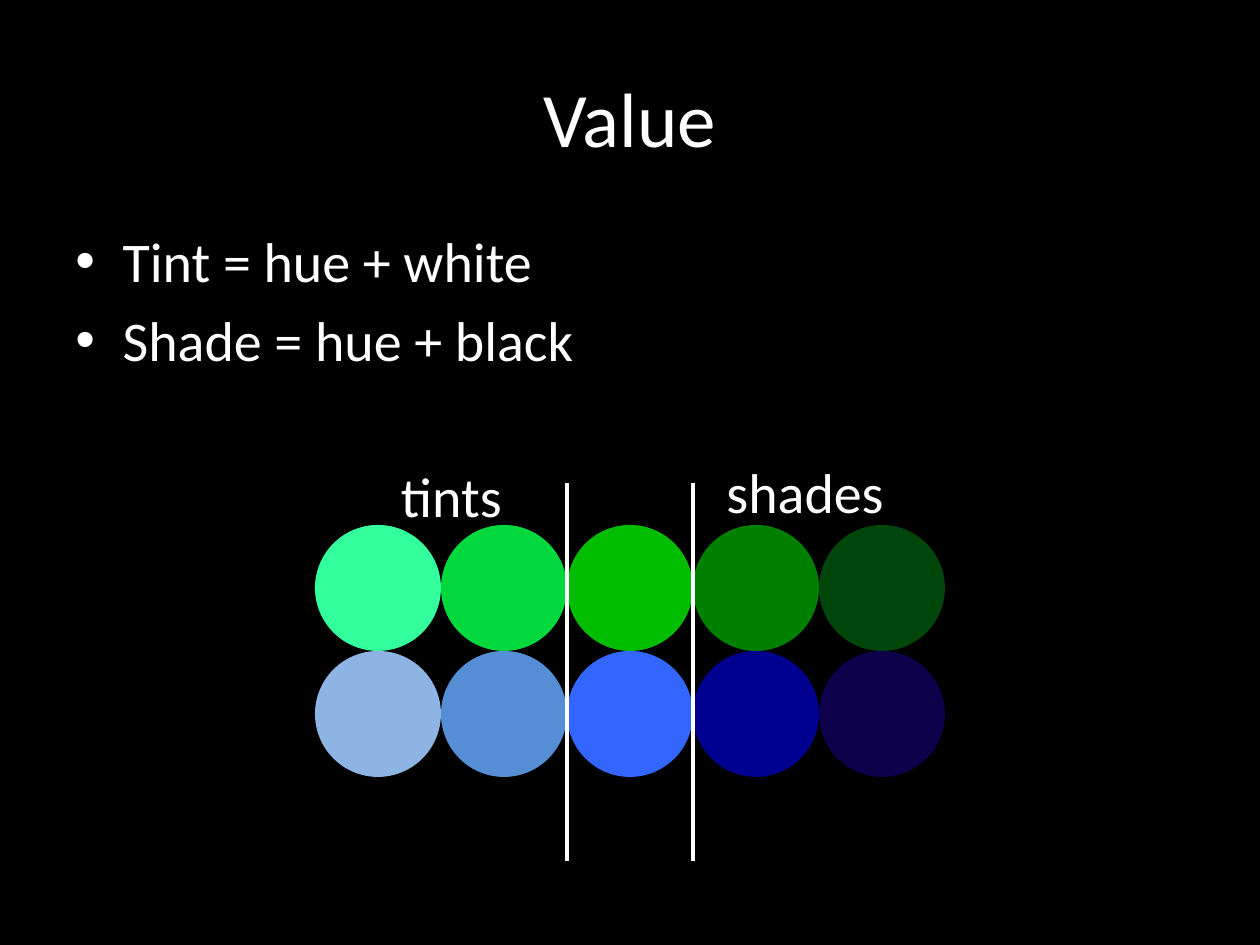
from lxml import etree
from pptx import Presentation
from pptx.dml.color import RGBColor
from pptx.enum import shapes, text
from pptx.oxml.ns import qn
from pptx.util import Pt

BLACK = RGBColor(0x00, 0x00, 0x00)
WHITE = RGBColor(0xFF, 0xFF, 0xFF)

# Each row runs from the lightest tint to the darkest shade
GREENS = [RGBColor.from_string(c) for c in
          ("33FF9C", "00D83E", "00BD00", "008000", "004509")]
BLUES = [RGBColor.from_string(c) for c in
         ("8EB4E3", "558ED5", "3366FF", "000090", "0D014C")]

FONT = "Calibri"
SIZE = 72             # circle diameter and grid step
LEFT, TOP = 180, 300  # corner of the circle grid


def add_bullet(par):
    props = par._p.get_or_add_pPr()
    props.set("marL", str(Pt(27)))
    props.set("indent", str(-Pt(27)))
    font = etree.SubElement(props, qn("a:buFont"))
    font.set("typeface", "Arial")
    mark = etree.SubElement(props, qn("a:buChar"))
    mark.set("char", "•")


def add_text(slide, lines, x, y, w, h, size=32, align=text.PP_ALIGN.LEFT,
             anchor=text.MSO_ANCHOR.TOP, bullet=False, before=0):
    box = slide.shapes.add_textbox(Pt(x), Pt(y), Pt(w), Pt(h))
    frame = box.text_frame
    frame.word_wrap = True
    frame.vertical_anchor = anchor
    frame.text = "\n".join(lines)
    for par in frame.paragraphs:
        par.alignment = align
        par.space_before = Pt(before)
        par.font.name = FONT
        par.font.size = Pt(size)
        par.font.color.rgb = WHITE
        if bullet:
            add_bullet(par)


def add_dot(slide, x, y, color):
    dot = slide.shapes.add_shape(shapes.MSO_SHAPE.OVAL,
                                 Pt(x), Pt(y), Pt(SIZE), Pt(SIZE))
    dot.shadow.inherit = False
    dot.fill.solid()
    dot.fill.fore_color.rgb = color
    dot.line.fill.background()


def add_rule(slide, x, top, end):
    rule = slide.shapes.add_connector(shapes.MSO_CONNECTOR.STRAIGHT,
                                      Pt(x), Pt(top), Pt(x), Pt(end))
    rule.line.color.rgb = WHITE
    rule.line.width = Pt(2)
    etree.SubElement(rule._element.spPr, qn("a:effectLst"))


def main():
    deck = Presentation()
    deck.slide_width, deck.slide_height = Pt(720), Pt(540)
    slide = deck.slides.add_slide(deck.slide_layouts[6])
    slide.background.fill.solid()
    slide.background.fill.fore_color.rgb = BLACK

    # Title and definitions
    add_text(slide, ["Value"], 36, 21.6, 648, 90, size=44,
             align=text.PP_ALIGN.CENTER, anchor=text.MSO_ANCHOR.MIDDLE)
    add_text(slide, ["Tint = hue + white", "Shade = hue + black"],
             36, 126, 648, 96, bullet=True, before=6.4)

    # Colour circles
    for row, colors in enumerate((GREENS, BLUES)):
        for col, color in enumerate(colors):
            add_dot(slide, LEFT + col * SIZE, TOP + row * SIZE, color)

    # Rules on both sides of the pure hues
    for col in (2, 3):
        add_rule(slide, LEFT + col * SIZE, 276, 492)

    # Labels
    add_text(slide, ["tints"], 222, 260, 120, 46)
    add_text(slide, ["shades"], 408, 258, 120, 46)

    deck.save("out.pptx")


if __name__ == "__main__":
    main()
